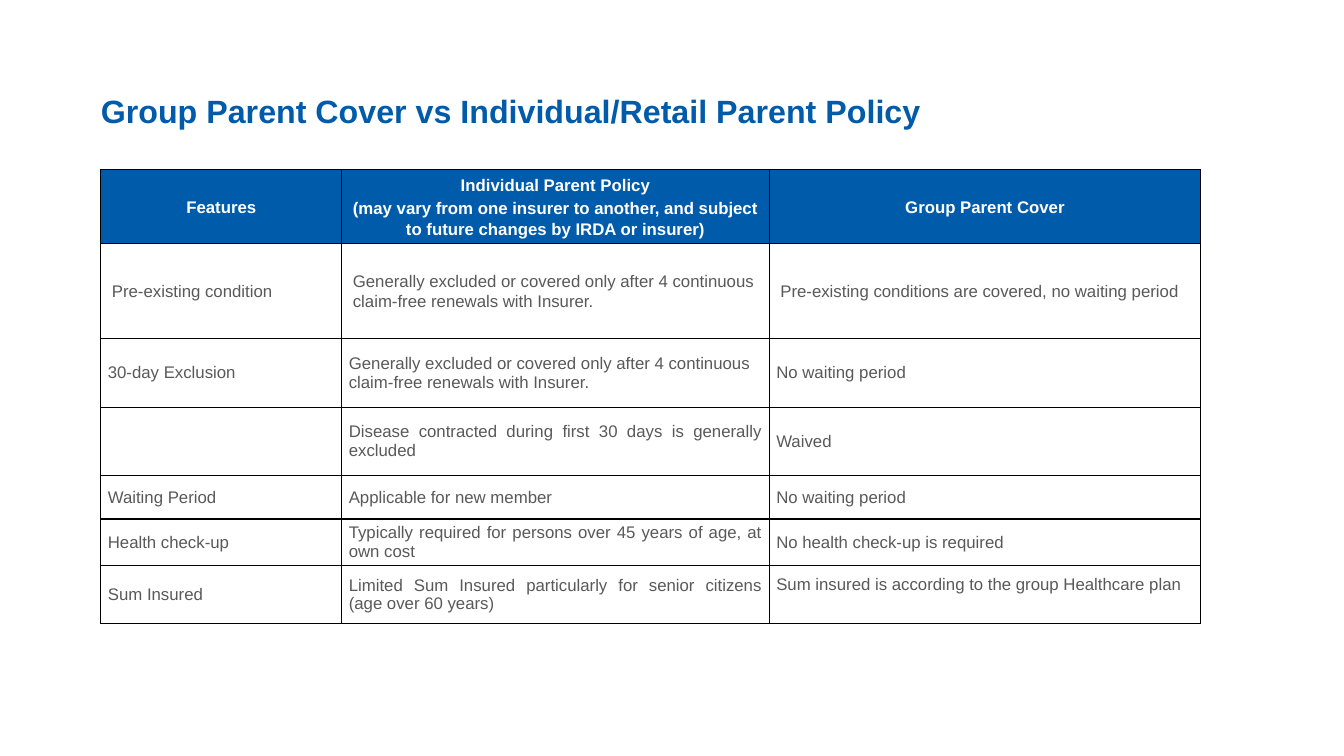
from dataclasses import dataclass

from lxml import etree
from pptx import Presentation
from pptx.dml.color import RGBColor
from pptx.enum.text import MSO_ANCHOR, MSO_AUTO_SIZE, PP_ALIGN
from pptx.oxml.ns import qn
from pptx.util import Inches, Pt

MIDDLE = MSO_ANCHOR.MIDDLE
NO_FIT = MSO_AUTO_SIZE.NONE
LEFT, CENTER, JUSTIFY = PP_ALIGN.LEFT, PP_ALIGN.CENTER, PP_ALIGN.JUSTIFY


@dataclass(frozen=True)
class Theme:
    """Colours, font and type sizes of the slide."""
    font: str = "Arial"
    blue: str = "005BAA"
    white: str = "FFFFFF"
    gray: str = "595959"
    border: str = "000000"
    title_size: int = 23
    table_size: int = 12


THEME = Theme()
COL_WIDTHS = (2.39, 4.24, 4.28)
ROW_HEIGHTS = (0.74, 0.94, 0.68, 0.68, 0.43, 0.46, 0.58)
RENEWALS = ("Generally excluded or covered only after 4 continuous "
            "claim-free renewals with Insurer.")
ROWS = (
    ("Features",
     "Individual Parent Policy\n(may vary from one insurer to another, and "
     "subject to future changes by IRDA or insurer)",
     "Group Parent Cover"),
    ("Pre-existing condition", RENEWALS,
     "Pre-existing conditions are covered, no waiting period"),
    ("30-day Exclusion", RENEWALS, "No waiting period"),
    ("", "Disease contracted during first 30 days is generally excluded",
     "Waived"),
    ("Waiting Period", "Applicable for new member", "No waiting period"),
    ("Health check-up",
     "Typically required for persons over 45 years of age, at own cost",
     "No health check-up is required"),
    ("Sum Insured",
     "Limited Sum Insured particularly for senior citizens (age over 60 years)",
     "Sum insured is according to the group Healthcare plan"),
)


def set_font(p, size, color, bold):
    """Format all the text of a paragraph."""
    p.font.name = THEME.font
    p.font.size = Pt(size)
    p.font.bold = bold
    p.font.color.rgb = RGBColor.from_string(color)


def set_borders(cell):
    """Draw a thin line on all four sides of a cell."""
    tc_pr = cell._tc.get_or_add_tcPr()
    for i, side in enumerate(("a:lnL", "a:lnR", "a:lnT", "a:lnB")):
        ln = etree.Element(qn(side), w=str(Pt(1)))
        fill = etree.SubElement(ln, qn("a:solidFill"))
        etree.SubElement(fill, qn("a:srgbClr"), val=THEME.border)
        tc_pr.insert(i, ln)


def add_title(s, x, y, w, h):
    """Place the slide title in the given box."""
    sp = s.shapes.title
    sp.left, sp.top, sp.width, sp.height = map(Inches, (x, y, w, h))
    tf = sp.text_frame
    tf.text = "Group Parent Cover vs Individual/Retail Parent Policy"
    tf.auto_size = NO_FIT
    tf.word_wrap = True
    tf.vertical_anchor = MIDDLE
    tf.margin_left = tf.margin_right = tf.margin_top = tf.margin_bottom = 0
    p = tf.paragraphs[0]
    p.alignment = LEFT
    p.line_spacing = Pt(34)
    set_font(p, THEME.title_size, THEME.blue, True)


def fill_cell(cell, text, row, col):
    """Write and format one cell according to its row and column."""
    header, roomy = row == 0, row < 2
    cell.text = text
    cell.vertical_anchor = MIDDLE
    cell.margin_left = cell.margin_right = Inches(0.11 if roomy else 0.07)
    cell.margin_top = cell.margin_bottom = Inches(0.05 if roomy else 0)
    cell.fill.solid()
    cell.fill.fore_color.rgb = RGBColor.from_string(
        THEME.blue if header else THEME.white)
    set_borders(cell)
    for i, p in enumerate(cell.text_frame.paragraphs):
        if header:
            p.alignment = CENTER
        else:
            p.alignment = JUSTIFY if col == 1 and row > 2 else LEFT
        if roomy:
            p.line_spacing = Pt(14.4)
        if i:
            p.space_before = Pt(2.4)
        set_font(p, THEME.table_size,
                 THEME.white if header else THEME.gray, header)


def add_comparison(s, x, y, w, h):
    """Place the policy comparison table in the given box."""
    table = s.shapes.add_table(len(ROWS), len(COL_WIDTHS),
                               *map(Inches, (x, y, w, h))).table
    table.horz_banding = False
    for column, width in zip(table.columns, COL_WIDTHS):
        column.width = Inches(width)
    for r, (height, texts) in enumerate(zip(ROW_HEIGHTS, ROWS)):
        table.rows[r].height = Inches(height)
        for c, text in enumerate(texts):
            fill_cell(table.cell(r, c), text, r, c)
    table.cell(len(ROWS) - 1, 2).margin_bottom = Inches(0.19)


def main():
    """Build and save the slide."""
    prs = Presentation()
    prs.slide_width, prs.slide_height = Inches(13.33), Inches(7.5)
    s = prs.slides.add_slide(prs.slide_layouts[5])
    add_title(s, 1, 0.84, 8.54, 0.43)
    add_comparison(s, 1, 1.68, sum(COL_WIDTHS), sum(ROW_HEIGHTS))
    prs.save("out.pptx")


if __name__ == "__main__":
    main()
